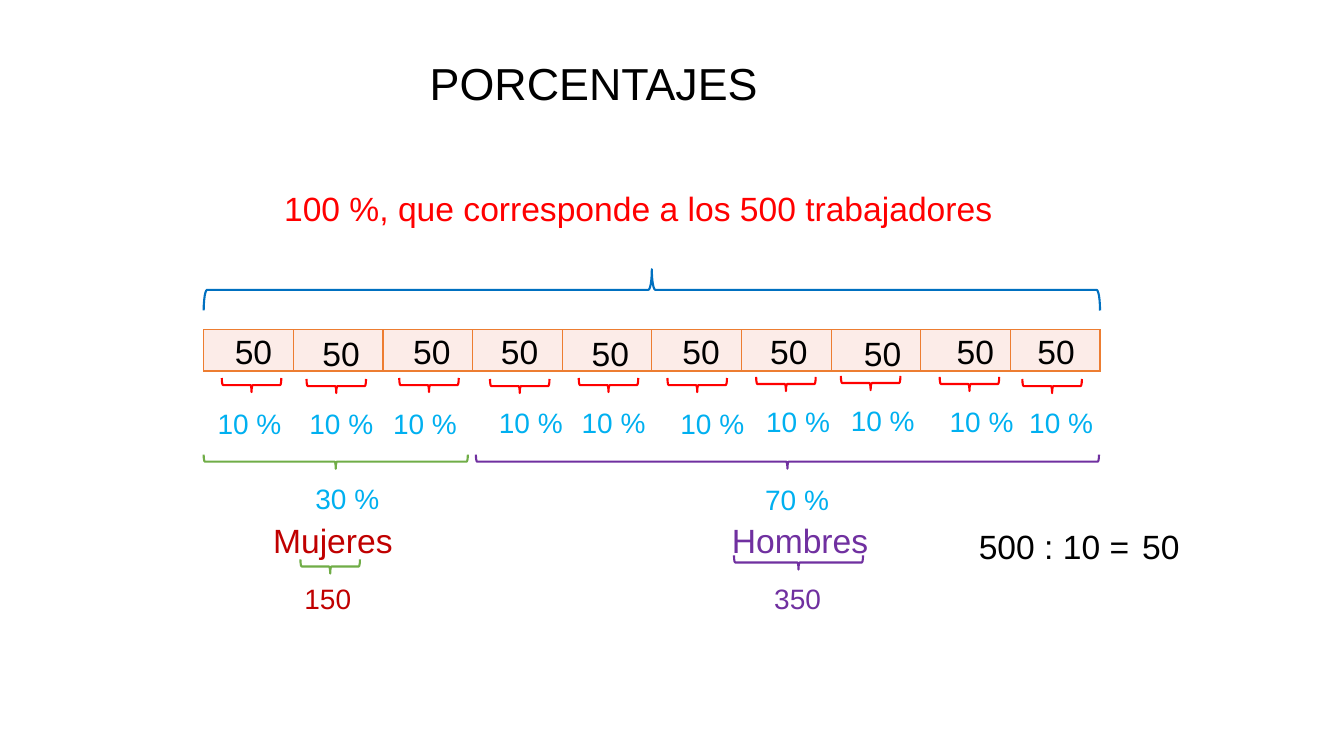
from pptx import Presentation
from pptx.dml.color import RGBColor
from pptx.enum.shapes import MSO_SHAPE as Shape
from pptx.enum.text import MSO_AUTO_SIZE as AutoSize, PP_ALIGN as Align
from pptx.oxml import parse_xml
from pptx.oxml.ns import nsdecls
from pptx.util import Inches, Pt

BLACK = RGBColor(0x00, 0x00, 0x00)
RED = RGBColor(0xFF, 0x00, 0x00)
DARK_RED = RGBColor(0xC0, 0x00, 0x00)
BLUE = RGBColor(0x00, 0x70, 0xC0)
SKY = RGBColor(0x00, 0xB0, 0xF0)
GREEN = RGBColor(0x70, 0xAD, 0x47)
PURPLE = RGBColor(0x70, 0x30, 0xA0)
ORANGE = RGBColor(0xED, 0x7D, 0x31)
PINK = RGBColor(0xFC, 0xEC, 0xE8)

PARTS = 10
BRACE_DEPTH = 0.14

# Offsets (x, y) from the strip's corner, one per tenth
AMOUNTS = [(0.21, -0.04), (1.08, -0.02), (1.98, -0.04), (2.85, -0.04), (3.75, -0.02),
           (4.65, -0.04), (5.52, -0.04), (6.45, -0.02), (7.37, -0.04), (8.17, -0.04)]
TENTH_BRACES = [(0.18, 0.48), (1.02, 0.49), (1.94, 0.48), (2.84, 0.49), (3.72, 0.48),
                (4.6, 0.48), (5.48, 0.47), (6.32, 0.46), (7.3, 0.47), (8.12, 0.49)]
PERCENTS = [(0.04, 0.71), (0.95, 0.71), (1.78, 0.71), (2.83, 0.7), (3.65, 0.7),
            (4.63, 0.71), (5.48, 0.69), (6.32, 0.68), (7.3, 0.69), (8.09, 0.7)]


def add_text(slide, text, left, top, width, height=0.5, size=24, color=BLACK,
             align=Align.LEFT):
    label = slide.shapes.add_textbox(Inches(left), Inches(top), Inches(width), Inches(height))
    frame = label.text_frame
    frame.word_wrap = True
    frame.auto_size = AutoSize.SHAPE_TO_FIT_TEXT
    paragraph = frame.paragraphs[0]
    paragraph.alignment = align
    run = paragraph.add_run()
    run.text = text
    run.font.name = "Arial"
    run.font.size = Pt(size)
    run.font.color.rgb = color


def add_brace(slide, left, top, width, color, depth=BRACE_DEPTH, kind=Shape.LEFT_BRACE):
    """Lay a brace on its side so that it covers width by depth as seen."""
    brace = slide.shapes.add_shape(
        kind, Inches(left + (width - depth) / 2), Inches(top + (depth - width) / 2),
        Inches(depth), Inches(width))
    brace.rotation = 270
    brace.shadow.inherit = False
    brace.fill.background()
    brace.line.color.rgb = color
    brace.line.width = Pt(1.5)


def style_cell(cell):
    cell.margin_top = cell.margin_bottom = 0
    borders = cell._tc.get_or_add_tcPr()
    for side in ("lnL", "lnR", "lnT", "lnB"):
        borders.append(parse_xml(
            f'<a:{side} {nsdecls("a")} w="{Pt(1)}"><a:solidFill>'
            f'<a:srgbClr val="{ORANGE}"/></a:solidFill></a:{side}>'))
    cell.fill.solid()
    cell.fill.fore_color.rgb = PINK


def add_strip(slide, left, top, width, height):
    # Ten equal cells
    tenths = slide.shapes.add_table(1, PARTS, Inches(left), Inches(top),
                                    Inches(width), Inches(height)).table
    tenths.rows[0].height = Inches(height)
    for column in tenths.columns:
        column.width = Inches(width / PARTS)
    for cell in tenths.iter_cells():
        style_cell(cell)

    # Brace over the whole
    add_brace(slide, left, top - 0.6, width, BLUE, depth=0.41, kind=Shape.RIGHT_BRACE)

    # Amount, brace and percentage of each tenth
    for amount, brace, percent in zip(AMOUNTS, TENTH_BRACES, PERCENTS):
        add_text(slide, "50", left + amount[0], top + amount[1], 0.59)
        add_brace(slide, left + brace[0], top + brace[1], 0.59, RED)
        add_text(slide, "10 %", left + percent[0], top + percent[1], 0.84, 0.44,
                 size=20, color=SKY)


def add_group(slide, left, top, width, share, name, total, brace, color, brace_color):
    """Each part is its text followed by its offsets and width."""
    add_brace(slide, left, top, width, brace_color)
    text, dx, dy, part_width = share
    add_text(slide, text, left + dx, top + dy, part_width, 0.44, size=20, color=SKY)
    text, dx, dy, part_width = name
    add_text(slide, text, left + dx, top + dy, part_width, color=color)
    dx, dy, part_width = brace
    add_brace(slide, left + dx, top + dy, part_width, brace_color)
    text, dx, dy, part_width = total
    add_text(slide, text, left + dx, top + dy, part_width, 0.44, size=20, color=color)


def add_heading(slide, left, top, width):
    add_text(slide, "PORCENTAJES", left, top, width, 0.64, size=32, align=Align.CENTER)
    add_text(slide, "100 %, que corresponde a los 500 trabajadores",
             left + 1.11, top + 1.32, 7.74, color=RED)


def add_division(slide, left, top, width):
    add_text(slide, "500 : 10 =", left, top, width)
    add_text(slide, "50", left + 1.62, top, 0.59)


def main():
    deck = Presentation()
    deck.slide_width, deck.slide_height = Inches(13.33), Inches(7.5)
    slide = deck.slides.add_slide(deck.slide_layouts[6])

    add_heading(slide, 1.61, 0.5, 8.56)
    add_strip(slide, 2.02, 3.27, 8.89, 0.41)
    add_group(slide, 2.02, 4.51, 2.62, share=("30 %", 1.01, 0.22, 0.84),
              name=("Mujeres", 0.59, 0.6, 1.51), total=("150", 0.9, 1.21, 0.68),
              brace=(0.96, 1.04, 0.59), color=DARK_RED, brace_color=GREEN)
    add_group(slide, 4.72, 4.51, 6.18, share=("70 %", 2.77, 0.23, 0.84),
              name=("Hombres", 2.44, 0.6, 1.68), total=("350", 2.86, 1.21, 0.68),
              brace=(2.56, 1.0, 1.28), color=PURPLE, brace_color=PURPLE)
    add_division(slide, 9.61, 5.17, 2.37)

    deck.save("out.pptx")


if __name__ == "__main__":
    main()
